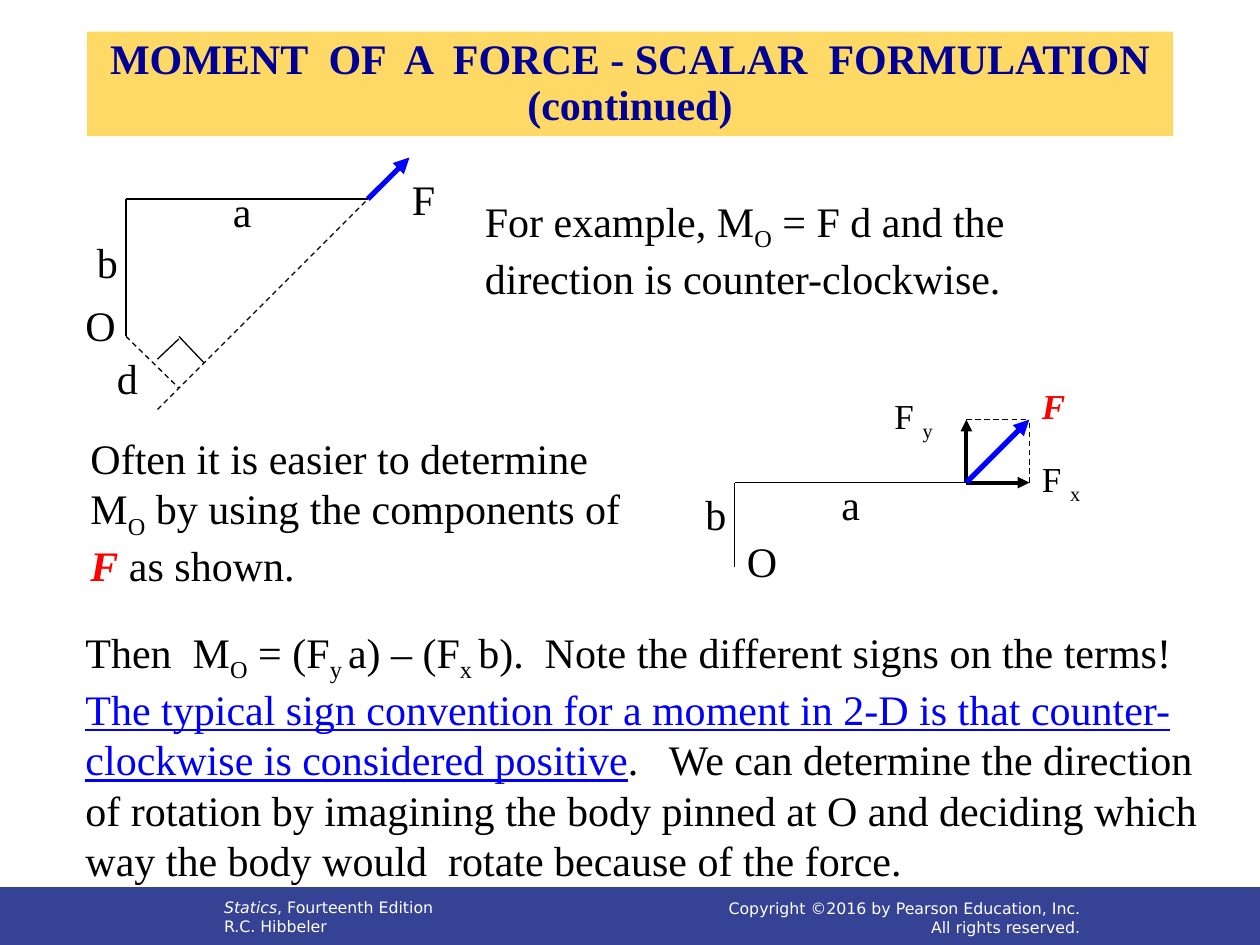
from pptx import Presentation
from pptx.dml.color import RGBColor
from pptx.enum.dml import MSO_LINE
from pptx.enum.shapes import MSO_CONNECTOR, MSO_SHAPE
from pptx.enum.text import MSO_ANCHOR, PP_ALIGN
from pptx.oxml.ns import qn
from pptx.util import Inches, Pt
from lxml.etree import SubElement

SERIF, SANS = "Times New Roman", "DejaVu Sans"
BLACK, WHITE, RED, BLUE = "000000", "FFFFFF", "FF0000", "0000FF"
NAVY, GOLD, BAR, LINK = "000096", "FFD966", "364395", "0000FA"


def color(code):
    return RGBColor.from_string(code)


def set_font(font, size, name=SERIF, code=BLACK):
    font.size, font.name = Pt(size), name
    font.color.rgb = color(code)


def add_run(para, text, style=""):
    """Add a run; style is "", "sub", "force", "key" or "italic"."""
    run = para.add_run()
    run.text = text
    font = run.font
    if style == "sub":
        run._r.get_or_add_rPr().set("baseline", "-25000")
    elif style == "force":
        font.bold = font.italic = True
        font.color.rgb = color(RED)
    elif style == "key":
        font.underline = True
        font.color.rgb = color(LINK)
    elif style == "italic":
        font.italic = True


def add_text(slide, box, lines, size=24, name=SERIF, code=BLACK,
             align=PP_ALIGN.LEFT, anchor=MSO_ANCHOR.TOP):
    """Add a text box; each line is a list of (text, style) runs."""
    frame = slide.shapes.add_textbox(*map(Inches, box)).text_frame
    frame.word_wrap = True
    frame.vertical_anchor = anchor
    for i, runs in enumerate(lines):
        para = frame.add_paragraph() if i else frame.paragraphs[0]
        para.alignment = align
        set_font(para.font, size, name, code)
        for run in runs:
            add_run(para, *run)


def add_line(slide, start, end, width=1, code=BLACK, dash=False, arrow=False):
    ends = map(Inches, (*start, *end))
    link = slide.shapes.add_connector(MSO_CONNECTOR.STRAIGHT, *ends)
    link.line.width = Pt(width)
    link.line.color.rgb = color(code)
    if dash:
        link.line.dash_style = MSO_LINE.DASH
    if arrow:
        SubElement(link.line._get_or_add_ln(), qn("a:tailEnd"), type="triangle")
    SubElement(link._element.spPr, qn("a:effectLst"))


def add_labels(slide, labels):
    for text, left, top, width in labels:
        add_text(slide, (left, top, width, 0.5), [[(text,)]])


def add_title(slide):
    title = slide.shapes.title
    title.left, title.top = Inches(0.69), Inches(0.25)
    title.width, title.height = Inches(8.62), Inches(0.83)
    title.fill.solid()
    title.fill.fore_color.rgb = color(GOLD)
    frame = title.text_frame
    frame.text = "MOMENT  OF  A  FORCE - SCALAR  FORMULATION (continued)"
    frame.vertical_anchor = MSO_ANCHOR.MIDDLE
    para = frame.paragraphs[0]
    para.alignment, para.line_spacing = PP_ALIGN.CENTER, 0.9
    set_font(para.font, 24, code=NAVY)
    para.font.bold = True


def add_footer(slide):
    bar = slide.shapes.add_shape(
        MSO_SHAPE.RECTANGLE, *map(Inches, (-0.01, 7.04, 10.02, 0.47)))
    bar.shadow.inherit = False
    bar.fill.solid()
    bar.fill.fore_color.rgb = bar.line.color.rgb = color(BAR)
    bar.line.width = Pt(0.5)
    add_text(slide, (1.68, 7.08, 6.16, 0.4),
             [[("Statics", "italic"), (", Fourteenth Edition",)],
              [("R.C. Hibbeler",)]], 9, SANS, WHITE)
    add_text(slide, (4.67, 7.07, 4, 0.43),
             [[("Copyright ©2016 by Pearson Education, Inc.",)],
              [("All rights reserved.",)]],
             9, SANS, WHITE, PP_ALIGN.RIGHT, MSO_ANCHOR.MIDDLE)


def add_body(slide):
    add_text(slide, (3.75, 1.5, 4.42, 0.9), [[
        ("For example, M",), ("O", "sub"),
        (" = F d and the direction is counter-clockwise.",)]])
    add_text(slide, (0.62, 3.38, 4.54, 1.31), [[
        ("Often it is easier to determine M",), ("O", "sub"),
        (" by using the components of ",), ("F", "force"), (" as shown.",)]])
    add_text(slide, (0.58, 4.92, 9.08, 2.12), [[
        ("Then  M",), ("O", "sub"), (" = (F",), ("y ", "sub"),
        ("a) – (F",), ("x ", "sub"),
        ("b).  Note the different signs on the terms!  ",),
        ("The typical sign convention for a moment in 2-D is that "
         "counter-clockwise is considered positive", "key"),
        (".   We can determine the direction of rotation by imagining the "
         "body pinned at O and deciding which way the body would  rotate "
         "because of the force.",)]])


def draw_arm(slide):
    """Draw the force with its moment arm d."""
    pin, bend, tip = (1, 2.67), (1, 1.58), (2.92, 1.58)
    add_line(slide, bend, pin)
    add_line(slide, bend, tip)
    add_line(slide, pin, (1.42, 3.08), 0.75, dash=True)
    add_line(slide, (1.25, 3.25), tip, 0.75, dash=True)
    add_line(slide, tip, (3.25, 1.25), 3, BLUE, arrow=True)
    add_line(slide, (1.25, 2.85), (1.42, 2.69), 0.75)
    add_line(slide, (1.42, 2.67), (1.62, 2.88), 0.75)
    add_labels(slide, [("F", 3.17, 1.33, 0.5), ("a", 1.75, 1.42, 0.5),
                       ("b", 0.67, 1.83, 0.33), ("d", 0.83, 2.75, 0.5),
                       ("O", 0.58, 2.33, 0.42)])


def draw_parts(slide):
    """Draw the force split into its x and y components."""
    left, base, side = 5.83, 3.83, 0.5
    x, top = 7.67, base - side
    right = x + side
    bend, tip, end = (left, base), (x, base), (right, top)
    add_line(slide, bend, tip)
    add_line(slide, bend, (left, 4.5))
    for corner in ((x, top), (right, base)):
        add_line(slide, tip, corner, 2.25, arrow=True)
        add_line(slide, corner, end, 0.75, dash=True)
    add_line(slide, tip, end, 3, BLUE, arrow=True)
    add_labels(slide, [("a", 6.58, 3.75, 0.5), ("b", 5.5, base, 0.33),
                       ("O", left, 4.2, 0.42)])
    add_text(slide, (right, 3, 0.5, 0.43), [[("F", "force")]], 20)
    for axis, at, y in (("x", right, 3.58), ("y", 7, 3.08)):
        add_text(slide, (at, y, 0.67, 0.43), [[("F ",), (axis, "sub")]], 20)


def main():
    deck = Presentation()
    deck.slide_width, deck.slide_height = Inches(10), Inches(7.5)
    slide = deck.slides.add_slide(deck.slide_layouts[5])
    add_footer(slide)
    add_body(slide)
    draw_arm(slide)
    draw_parts(slide)
    add_title(slide)
    deck.save("out.pptx")


if __name__ == "__main__":
    main()
